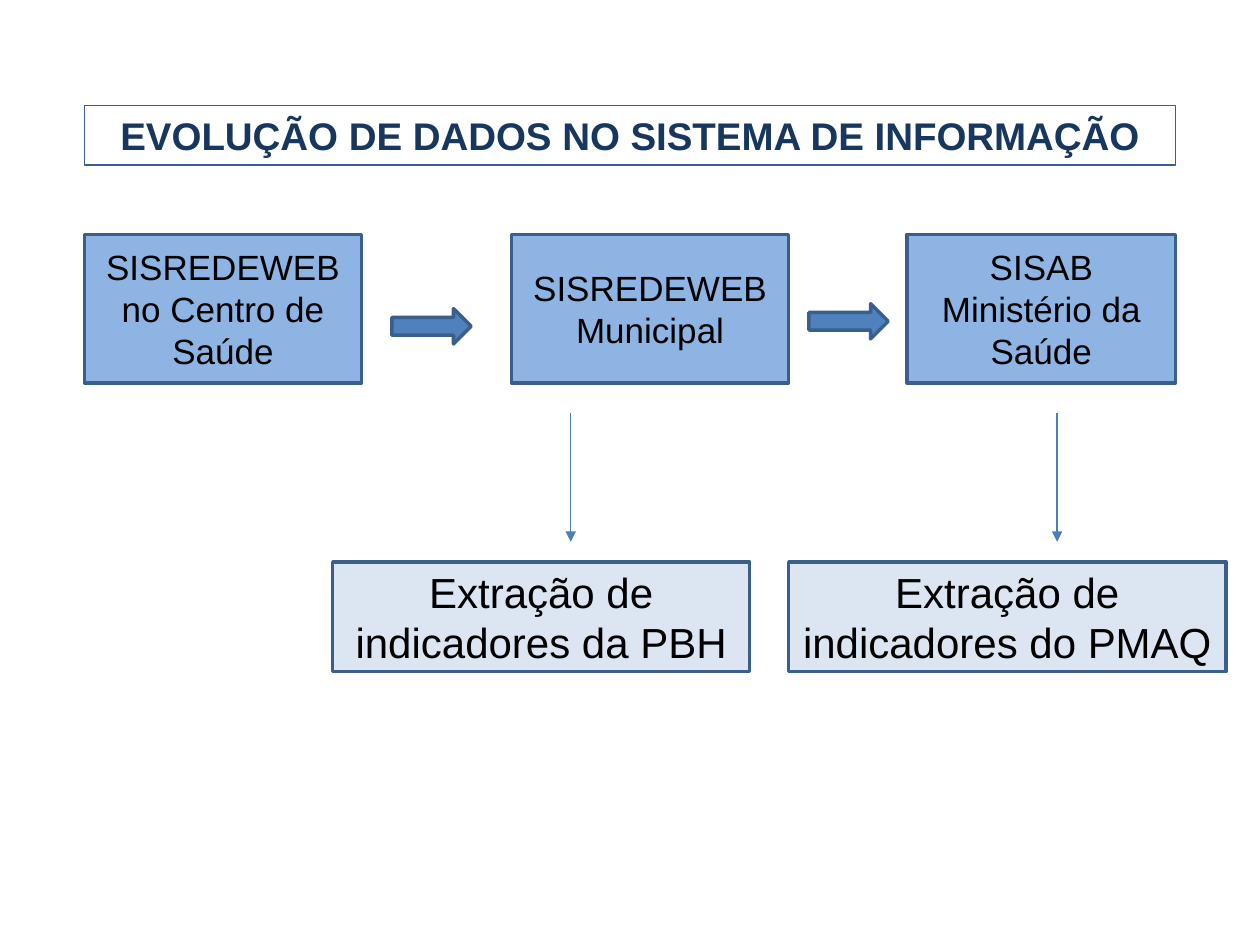
from lxml import etree
from pptx import Presentation
from pptx.dml.color import RGBColor
from pptx.enum.shapes import MSO_CONNECTOR as Line, MSO_SHAPE as Shape
from pptx.enum.text import MSO_ANCHOR as Anchor, PP_ALIGN as Align
from pptx.oxml.ns import qn
from pptx.util import Inches, Pt

COLORS = {
    "step": "8EB4E3",
    "result": "DCE6F2",
    "arrow": "4F81BD",
    "edge": "3A5F8C",
    "link": "4B7EBC",
    "title": "17375E",
    "text": "000000",
}


def color(name):
    return RGBColor.from_string(COLORS[name])


def write(frame, text, size=20, tint="text", bold=False, anchor=Anchor.MIDDLE):
    """Fill the frame with centred text, one paragraph per line."""
    frame.word_wrap = True
    frame.vertical_anchor = anchor
    frame.text = text
    for para in frame.paragraphs:
        para.alignment = Align.CENTER
        font = para.font
        font.name, font.size, font.bold = "Arial", Pt(size), bold
        font.color.rgb = color(tint)


class Board:
    """Holds the current slide and its drawing style."""

    edge = 2
    thin = 0.75

    def __init__(self, slide):
        self.shapes = slide.shapes

    def shape(self, kind, place, fill=None, width=edge):
        item = self.shapes.add_shape(kind, *map(Inches, place))
        item.shadow.inherit = False
        if fill:
            item.fill.solid()
            item.fill.fore_color.rgb = color(fill)
        else:
            item.fill.background()
        item.line.color.rgb = color("edge")
        item.line.width = Pt(width)
        return item

    def box(self, text, place, fill, **style):
        write(self.shape(Shape.RECTANGLE, place, fill).text_frame, text, **style)

    def title(self, text, place):
        item = self.shape(Shape.RECTANGLE, place, width=self.thin)
        write(item.text_frame, text, size=22, tint="title", bold=True,
              anchor=Anchor.TOP)

    def arrow(self, place):
        self.shape(Shape.RIGHT_ARROW, place, "arrow")

    def drop(self, x, top, end):
        """Draw a thin line down with an arrowhead at its end."""
        points = map(Inches, (x, top, x, end))
        link = self.shapes.add_connector(Line.STRAIGHT, *points)
        link.line.color.rgb = color("link")
        link.line.width = Pt(self.thin)
        etree.SubElement(link.line._get_or_add_ln(), qn("a:tailEnd"),
                         type="triangle")
        etree.SubElement(link._element.spPr, qn("a:effectLst"))


def main():
    deck = Presentation()
    deck.slide_width, deck.slide_height = Inches(10), Inches(7.5)
    board = Board(deck.slides.add_slide(deck.slide_layouts[6]))

    steps = [
        (0.67, 2.2, "SISREDEWEB\nno Centro de Saúde"),
        (4.06, 2.2, "SISREDEWEB\nMunicipal"),
        (7.2, 2.13, "SISAB\nMinistério da Saúde"),
    ]
    for left, width, text in steps:
        board.box(text, (left, 1.86, width, 1.18), "step")

    for left, top in [(3.11, 2.45), (6.42, 2.41)]:
        board.arrow((left, top, 0.63, 0.28))

    for x in (4.53, 8.39):
        board.drop(x, 3.28, 4.3)

    results = [
        (2.64, 3.31, "Extração de indicadores da PBH"),
        (6.26, 3.47, "Extração de indicadores do PMAQ"),
    ]
    for left, width, text in results:
        board.box(text, (left, 4.46, width, 0.87), "result", size=24)

    board.title("EVOLUÇÃO DE DADOS NO SISTEMA DE INFORMAÇÃO",
                (0.67, 0.84, 8.66, 0.47))
    deck.save("out.pptx")


if __name__ == "__main__":
    main()
